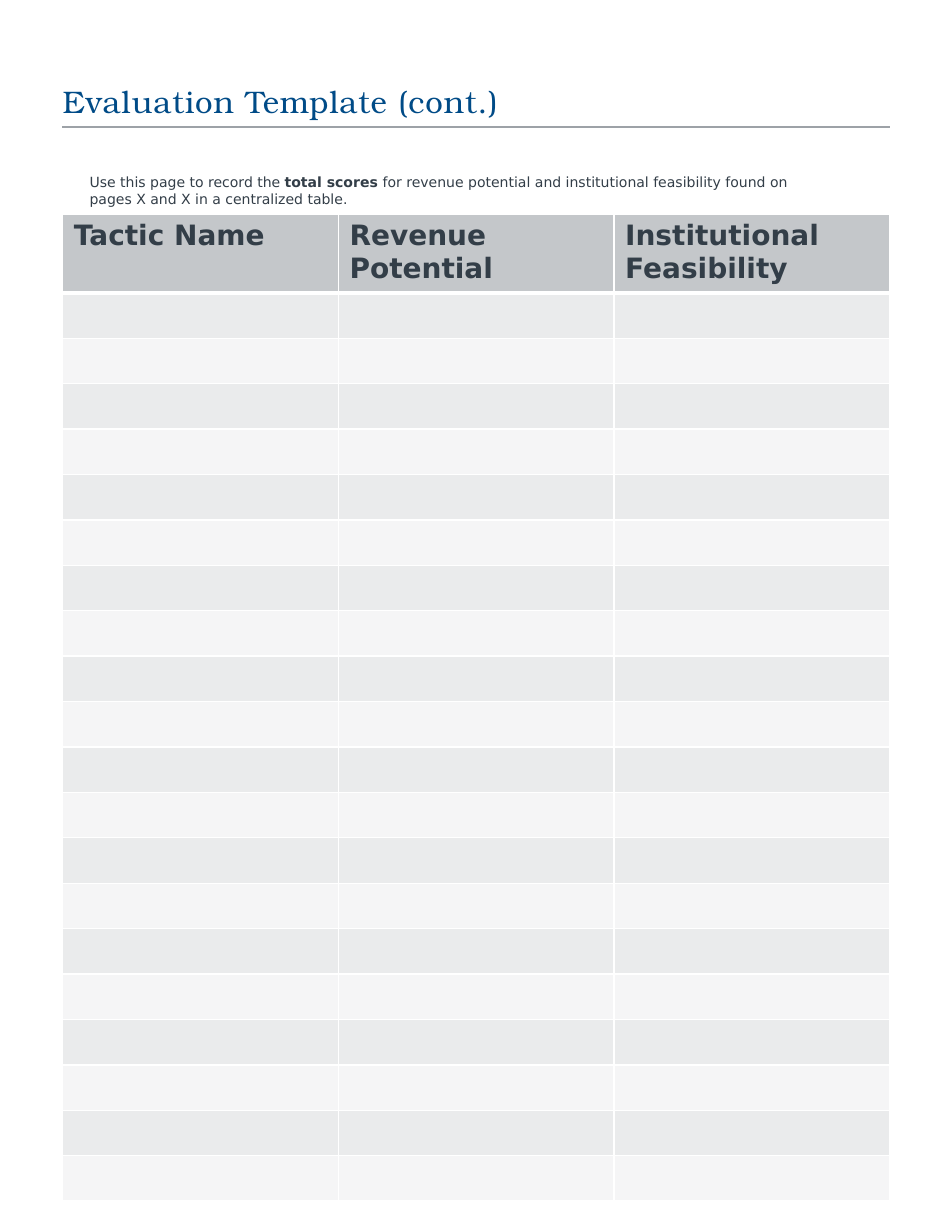
from dataclasses import dataclass

from lxml import etree
from pptx import Presentation
from pptx.dml.color import RGBColor
from pptx.enum.shapes import MSO_CONNECTOR
from pptx.enum.text import MSO_ANCHOR
from pptx.oxml.ns import qn
from pptx.util import Pt

LINE = MSO_CONNECTOR.STRAIGHT
TOP, BOTTOM = MSO_ANCHOR.TOP, MSO_ANCHOR.BOTTOM

BLUE = RGBColor(0x00, 0x4B, 0x87)
SLATE = RGBColor(0x33, 0x3E, 0x48)
RULE_GRAY = RGBColor(0x9D, 0xA2, 0xA7)
HEADER_FILL = RGBColor(0xC4, 0xC7, 0xCA)
BAND_FILLS = (RGBColor(0xEA, 0xEB, 0xEC), RGBColor(0xF5, 0xF5, 0xF6))
WHITE = RGBColor(0xFF, 0xFF, 0xFF)

SERIF, SANS = "TeX Gyre Bonum", "DejaVu Sans"
HEADERS = ("Tactic Name", "Revenue Potential", "Institutional Feasibility")
BODY_ROWS = 20
ROW_HEIGHT, COL_WIDTH = 29.21, 177.2


@dataclass
class TextBlock:
    left: float
    top: float
    width: float
    height: float
    runs: tuple  # (text, bold) pairs
    font: dict
    paragraph: dict
    anchor: MSO_ANCHOR = TOP
    tracking: int = 0  # hundredths of a point


def style_font(font, color: RGBColor, **values) -> None:
    for name, value in values.items():
        setattr(font, name, value)
    font.color.rgb = color


def add_text(slide, block: TextBlock) -> None:
    sp = slide.shapes.add_textbox(Pt(block.left), Pt(block.top),
                                  Pt(block.width), Pt(block.height))
    tf = sp.text_frame
    frame = dict(word_wrap=True, vertical_anchor=block.anchor, margin_left=0,
                 margin_top=0, margin_right=0, margin_bottom=0)
    for name, value in frame.items():
        setattr(tf, name, value)
    p = tf.paragraphs[0]
    for name, value in block.paragraph.items():
        setattr(p, name, value)
    for text, bold in block.runs:
        r = p.add_run()
        r.text = text
        style_font(r.font, **block.font, bold=bold)
        if block.tracking:
            r.font._element.set("spc", str(block.tracking))


def add_rule(slide, left: float, right: float, y: float) -> None:
    line = slide.shapes.add_connector(LINE, Pt(left), Pt(y), Pt(right), Pt(y))
    line.line.color.rgb = RULE_GRAY
    line.line.width = Pt(1)
    etree.SubElement(line._element.spPr, qn("a:effectLst"))


def set_borders(cell, widths: dict) -> None:
    tc_pr = cell._tc.get_or_add_tcPr()
    for index, (side, width) in enumerate(widths.items()):
        ln = etree.Element(qn(f"a:{side}"), w=str(Pt(width)))
        fill = etree.SubElement(ln, qn("a:solidFill"))
        etree.SubElement(fill, qn("a:srgbClr"), val=str(WHITE))
        tc_pr.insert(index, ln)


def fill_cell(cell, row: int) -> None:
    cell.fill.solid()
    cell.fill.fore_color.rgb = BAND_FILLS[(row - 1) % 2] if row else HEADER_FILL
    # A heavier line separates the header from the body
    set_borders(cell, {"lnL": 1, "lnR": 1, "lnT": 3 if row == 1 else 1,
                       "lnB": 1 if row else 3})


def add_score_table(slide, left: float, top: float) -> None:
    rows, cols = BODY_ROWS + 1, len(HEADERS)
    table = slide.shapes.add_table(rows, cols, Pt(left), Pt(top),
                                   Pt(COL_WIDTH * cols),
                                   Pt(ROW_HEIGHT * rows)).table
    table.horz_banding = False
    for column in table.columns:
        column.width = Pt(COL_WIDTH)
    for i, row in enumerate(table.rows):
        row.height = Pt(ROW_HEIGHT)
        for cell in row.cells:
            fill_cell(cell, i)
    for cell, text in zip(table.rows[0].cells, HEADERS):
        r = cell.text_frame.paragraphs[0].add_run()
        r.text = text
        style_font(r.font, SLATE, name=SANS, size=Pt(18), bold=True)


TITLE = TextBlock(
    40.3, 55.4, 532, 21.6, (("Evaluation Template (cont.)", False),),
    dict(name=SERIF, size=Pt(20), color=BLUE), dict(line_spacing=0.9),
    BOTTOM, 50)
INSTRUCTIONS = TextBlock(
    57.6, 111.6, 468, 21.6,
    (("Use this page to record the ", False),
     ("total scores ", True),
     ("for revenue potential and institutional feasibility found on "
      "pages X and X in a centralized table.", False)),
    dict(name=SANS, size=Pt(9), color=SLATE), dict(space_before=Pt(5)))


def main() -> None:
    prs = Presentation()
    prs.slide_width, prs.slide_height = Pt(612), Pt(792)
    slide = prs.slides.add_slide(prs.slide_layouts[6])

    # Heading
    add_rule(slide, 39.9, 572, 81.5)
    add_text(slide, TITLE)

    # Score table and its instructions
    add_score_table(slide, 40.3, 137.8)
    add_text(slide, INSTRUCTIONS)

    prs.save("out.pptx")


if __name__ == "__main__":
    main()
